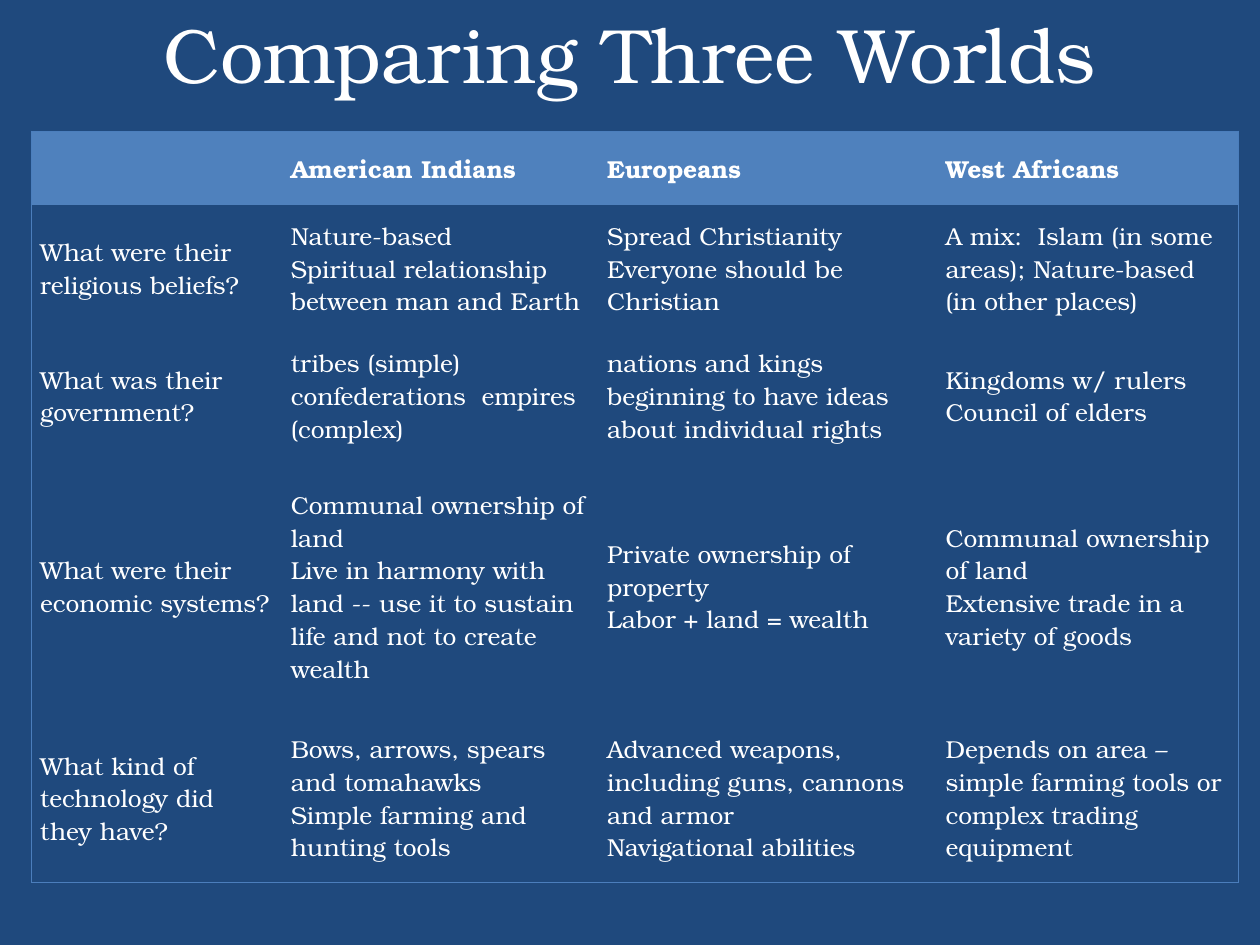
from lxml.etree import SubElement
from pptx import Presentation
from pptx.dml.color import RGBColor
from pptx.enum.text import MSO_ANCHOR as Anchor, PP_ALIGN as Align
from pptx.oxml.ns import qn
from pptx.util import Pt

FONT = "TeX Gyre Bonum"
NAVY, BLUE, EDGE, WHITE = "1F497D", "4F81BD", "4B7EBC", "FFFFFF"
NO_STYLE_NO_GRID = "{2D5ABB26-0587-4C30-8999-92F81FD0307C}"

COLUMN_WIDTHS = [143.2, 180.8, 193.4, 172.6]
ROW_HEIGHTS = [42, 72.7, 72.7, 145.4, 96.5]
ROWS = [
    ["", "American Indians", "Europeans", "West Africans"],
    ["What were their religious beliefs?",
     "Nature-based\nSpiritual relationship between man and Earth",
     "Spread Christianity\nEveryone should be Christian",
     "A mix:  Islam (in some areas); Nature-based (in other places)"],
    ["What was their government?",
     "tribes (simple)  confederations  empires (complex)",
     "nations and kings\nbeginning to have ideas about individual rights",
     "Kingdoms w/ rulers\nCouncil of elders"],
    ["What were their economic systems?",
     "Communal ownership of land\nLive in harmony with land -- use it to "
     "sustain life and not to create wealth",
     "Private ownership of property\nLabor + land = wealth",
     "Communal ownership of land\nExtensive trade in a variety of goods"],
    ["What kind of technology did they have?",
     "Bows, arrows, spears and tomahawks\nSimple farming and hunting tools",
     "Advanced weapons, including guns, cannons and armor\n"
     "Navigational abilities",
     "Depends on area – simple farming tools or complex trading equipment"],
]


def color(value):
    return RGBColor.from_string(value)


def format_text(frame, size, bold=False, align=Align.LEFT):
    for para in frame.paragraphs:
        para.alignment = align
        for span in para.runs:
            font = span.font
            font.name, font.size, font.bold = FONT, Pt(size), bold
            font.color.rgb = color(WHITE)


def add_title(page, text, left, top, width, height):
    box = page.shapes.add_textbox(Pt(left), Pt(top), Pt(width), Pt(height))
    frame = box.text_frame
    frame.word_wrap = True
    frame.vertical_anchor = Anchor.MIDDLE
    frame.text = text
    format_text(frame, 44, align=Align.CENTER)


def set_borders(cell, visible_sides):
    """Draw the sides named by L, R, T and B, and hide the others."""
    properties = cell._tc.get_or_add_tcPr()
    for side in "LRTB":
        line = SubElement(properties, qn(f"a:ln{side}"), w=str(Pt(0.75)))
        if side in visible_sides:
            fill = SubElement(line, qn("a:solidFill"))
            SubElement(fill, qn("a:srgbClr"), val=EDGE)
        else:
            SubElement(line, qn("a:noFill"))


def outer_sides(row, column):
    """Name the sides of a cell that lie on the table's outline."""
    edges = {"L": column == 0, "R": column == len(COLUMN_WIDTHS) - 1,
             "T": row == 0, "B": row == len(ROW_HEIGHTS) - 1}
    return [side for side, on_edge in edges.items() if on_edge]


def fill_cell(cell, text, is_header):
    cell.vertical_anchor = Anchor.MIDDLE
    cell.margin_left = cell.margin_right = Pt(5)
    cell.margin_top = cell.margin_bottom = 0
    cell.text_frame.text = text
    format_text(cell.text_frame, 14, bold=is_header)
    if is_header:
        cell.fill.solid()
        cell.fill.fore_color.rgb = color(BLUE)
    else:
        cell.fill.background()


def add_comparison_table(page, left, top):
    frame = page.shapes.add_table(
        len(ROW_HEIGHTS), len(COLUMN_WIDTHS), Pt(left), Pt(top),
        Pt(sum(COLUMN_WIDTHS)), Pt(sum(ROW_HEIGHTS)))
    table = frame.table
    table._tbl.tblPr.find(qn("a:tableStyleId")).text = NO_STYLE_NO_GRID
    table.horz_banding = False
    for column, width in zip(table.columns, COLUMN_WIDTHS):
        column.width = Pt(width)
    for row, height in zip(table.rows, ROW_HEIGHTS):
        row.height = Pt(height)
    for r, texts in enumerate(ROWS):
        for c, text in enumerate(texts):
            cell = table.cell(r, c)
            set_borders(cell, outer_sides(r, c))
            fill_cell(cell, text, is_header=r == 0)


def main():
    deck = Presentation()
    deck.slide_width, deck.slide_height = Pt(720), Pt(540)
    page = deck.slides.add_slide(deck.slide_layouts[6])
    page.background.fill.solid()
    page.background.fill.fore_color.rgb = color(NAVY)
    add_title(page, "Comparing Three Worlds", 54, -15, 612, 90)
    add_comparison_table(page, 18, 75)
    deck.save("out.pptx")


if __name__ == "__main__":
    main()
